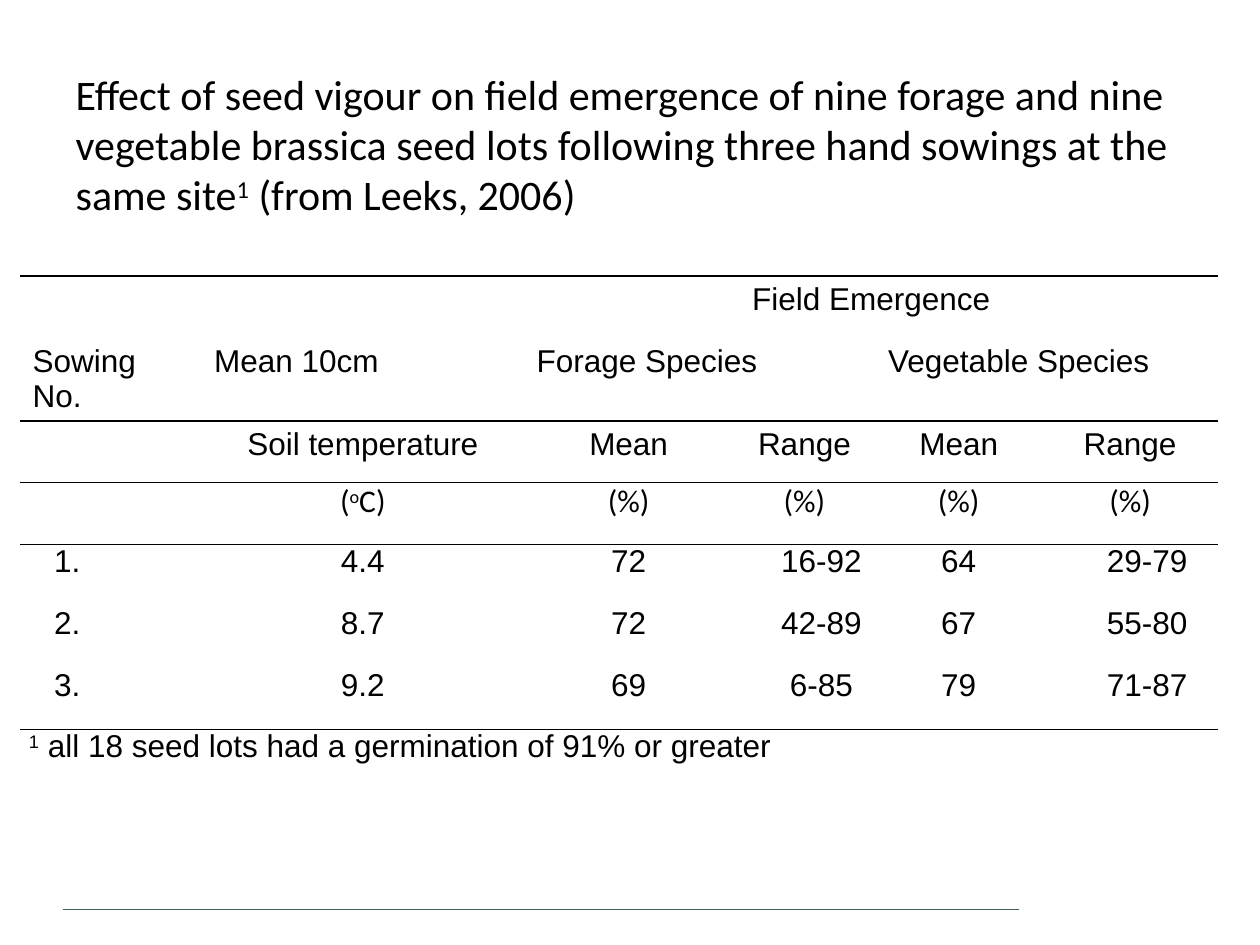
from pptx import Presentation
from pptx.dml.color import RGBColor
from pptx.enum.shapes import MSO_CONNECTOR
from pptx.enum.text import MSO_ANCHOR, PP_ALIGN
from pptx.oxml import parse_xml
from pptx.oxml.ns import nsdecls, qn
from pptx.util import Inches, Pt

BLACK = "000000"
TEAL = "425E5B"
NO_STYLE = "{2D5ABB26-0587-4C30-8999-92F81FD0307C}"
TITLE = ("Effect of seed vigour on field emergence of nine forage and nine "
         "vegetable brassica seed lots following three hand sowings at the "
         "same site^1^ (from Leeks, 2006)")
COLUMN_WIDTHS = [1.44, 2.56, 1.66, 1.13, 1.32, 1.4]
ROW_HEIGHT = 0.49
ROWS = [
    ["", "", "Field Emergence", "", "", ""],
    ["Sowing No.", "Mean 10cm", "Forage Species", "", "Vegetable Species", ""],
    ["", "Soil temperature", "Mean", "Range", "Mean", "Range"],
    ["", "(^o^C)", "(%)", "(%)", "(%)", "(%)"],
    ["1.", "4.4", "72", "16-92", "64", "29-79"],
    ["2.", "8.7", "72", "42-89", "67", "55-80"],
    ["3.", "9.2", "69", "6-85", "79", "71-87"],
    ["^1^ all 18 seed lots had a germination of 91% or greater", "", "", "", "", ""],
]
MERGES = [(0, 2, 5), (1, 2, 3), (1, 4, 5), (7, 0, 5)]
SPECIES_ROW, UNIT_ROW, NOTE_ROW = 1, 3, 7
RULED_ROWS = (1, 2, 6)
RANGE_COLUMNS = (3, 5)


def color(hex_value):
    """Return the colour for a hex string."""
    return RGBColor.from_string(hex_value)


def write_text(paragraph, marked_text, font_name, size):
    """Write text whose parts between carets are superscript."""
    for index, part in enumerate(marked_text.split("^")):
        if not part:
            continue
        run = paragraph.add_run()
        run.text = part
        run.font.name = font_name
        run.font.size = Pt(size)
        run.font.color.rgb = color(BLACK)
        if index % 2:
            run.font._element.set("baseline", "30000")


def add_title(slide):
    """Place and fill the title."""
    title = slide.shapes.title
    title.left, title.top = Inches(0.5), Inches(0.49)
    title.width, title.height = Inches(8.88), Inches(1.31)
    frame = title.text_frame
    frame.word_wrap = True
    frame.vertical_anchor = MSO_ANCHOR.TOP
    paragraph = frame.paragraphs[0]
    paragraph.alignment = PP_ALIGN.LEFT
    write_text(paragraph, TITLE, "Calibri", 24)


def add_footer_rule(slide):
    """Draw the thin rule at the foot of the slide."""
    rule = slide.shapes.add_connector(
        MSO_CONNECTOR.STRAIGHT, Inches(8.09), Inches(7.22), Inches(0.5), Inches(7.22))
    rule.line.color.rgb = color(TEAL)
    rule.line.width = Pt(0.25)
    rule._element.spPr.append(parse_xml(f"<a:effectLst {nsdecls('a')}/>"))


def set_border(cell, side):
    """Draw a one-point black border on one side of a cell."""
    cell._tc.get_or_add_tcPr().append(parse_xml(
        f'<a:{side} {nsdecls("a")} w="{Pt(1)}"><a:solidFill>'
        f'<a:srgbClr val="{BLACK}"/></a:solidFill></a:{side}>'))


def format_cell(cell, row, column):
    """Set the borders, fill and margins of a cell."""
    if row in (0, *(ruled + 1 for ruled in RULED_ROWS)):
        set_border(cell, "lnT")
    if row in RULED_ROWS:
        set_border(cell, "lnB")
    cell.fill.background()
    if row >= UNIT_ROW:
        cell.margin_left = cell.margin_right = Inches(0.07)
        cell.margin_top = cell.margin_bottom = 0
    if UNIT_ROW < row < NOTE_ROW:
        if column == 0:
            cell.margin_left = Inches(0.27)
        elif column in RANGE_COLUMNS:
            cell.margin_left = Inches(0.34)


def fill_cell(cell, row, column, marked_text):
    """Write the text of a cell."""
    paragraph = cell.text_frame.paragraphs[0]
    left_aligned = column == 0 or row == SPECIES_ROW
    paragraph.alignment = PP_ALIGN.LEFT if left_aligned else PP_ALIGN.CENTER
    write_text(paragraph, marked_text, "Calibri" if row == UNIT_ROW else "Arial", 18)


def add_emergence_table(slide):
    """Build the field emergence table."""
    table = slide.shapes.add_table(
        len(ROWS), len(COLUMN_WIDTHS), Inches(0.16), Inches(2.19),
        Inches(sum(COLUMN_WIDTHS)), Inches(ROW_HEIGHT * len(ROWS))).table
    table.first_row = table.horz_banding = False
    table._tbl.tblPr.find(qn("a:tableStyleId")).text = NO_STYLE
    for column, width in zip(table.columns, COLUMN_WIDTHS):
        column.width = Inches(width)
    for row in table.rows:
        row.height = Inches(ROW_HEIGHT)
    for row, first, last in MERGES:
        table.cell(row, first).merge(table.cell(row, last))
    for row, texts in enumerate(ROWS):
        for column, marked_text in enumerate(texts):
            cell = table.cell(row, column)
            format_cell(cell, row, column)
            fill_cell(cell, row, column, marked_text)


def main():
    """Build and save the slide."""
    presentation = Presentation()
    presentation.slide_width, presentation.slide_height = Inches(10), Inches(7.5)
    slide = presentation.slides.add_slide(presentation.slide_layouts[5])
    add_footer_rule(slide)
    add_title(slide)
    add_emergence_table(slide)
    presentation.save("out.pptx")


if __name__ == "__main__":
    main()
